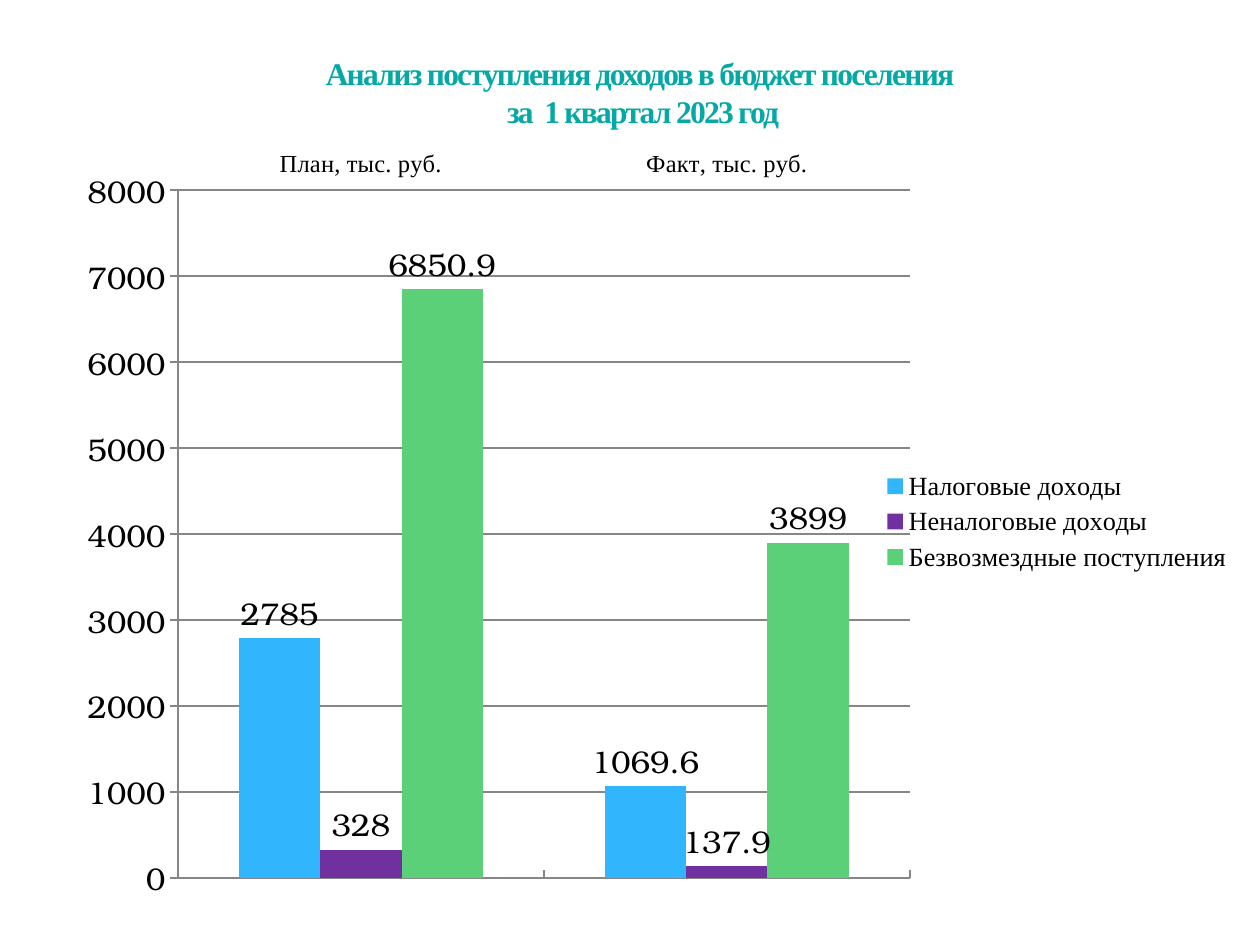
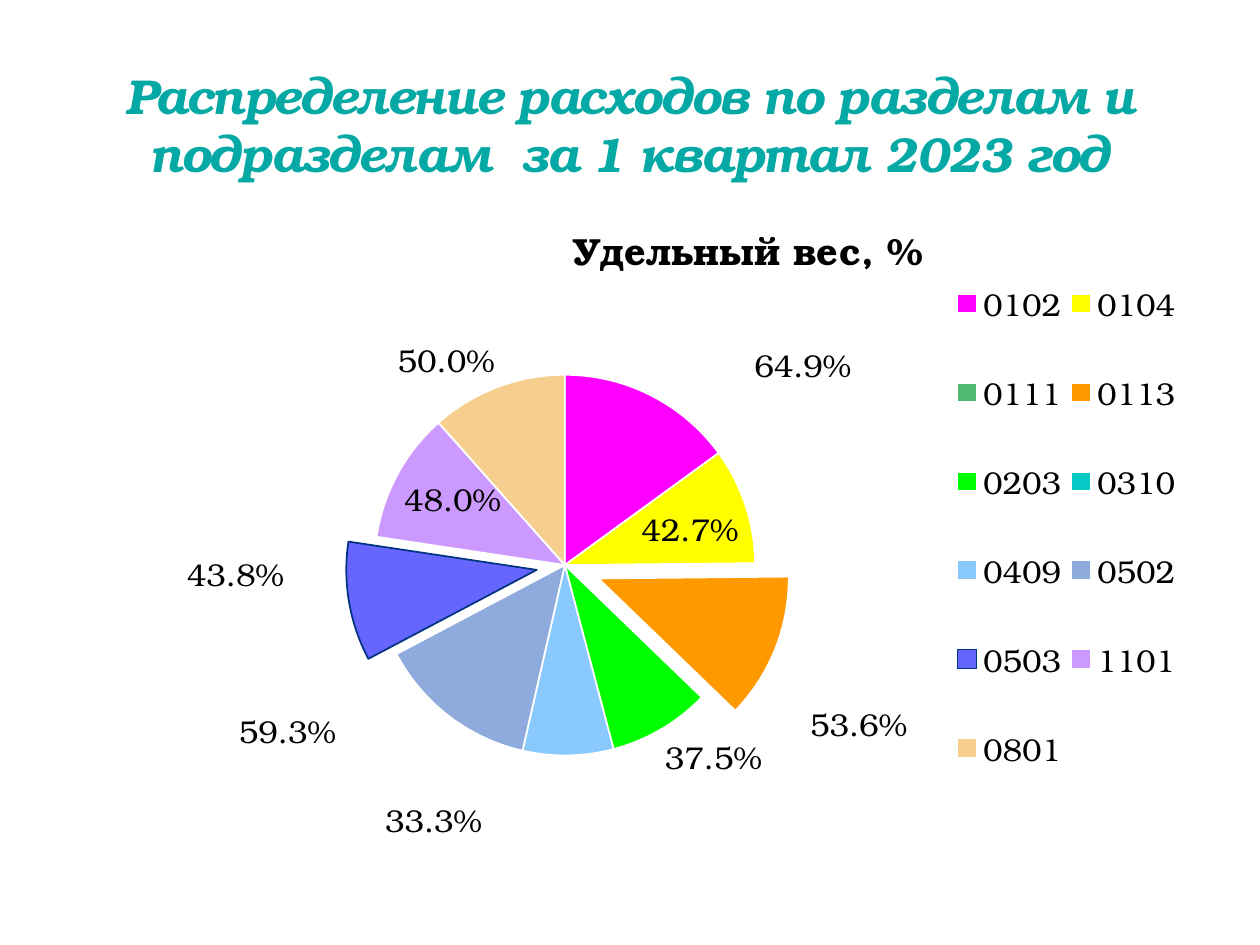
from lxml import etree
from pptx import Presentation
from pptx.chart.data import CategoryChartData
from pptx.dml.color import RGBColor
from pptx.enum.chart import (XL_CHART_TYPE, XL_LABEL_POSITION, XL_LEGEND_POSITION,
                             XL_TICK_LABEL_POSITION, XL_TICK_MARK)
from pptx.enum.text import MSO_ANCHOR, PP_ALIGN
from pptx.oxml.ns import qn
from pptx.util import Pt

OUTSIDE, INSIDE = XL_LABEL_POSITION.OUTSIDE_END, XL_LABEL_POSITION.INSIDE_END
MIDDLE, BOTTOM = MSO_ANCHOR.MIDDLE, MSO_ANCHOR.BOTTOM

# Content
INCOME_TITLE = "Анализ поступления доходов в бюджет поселения\v за  1 квартал 2023 год\v "
INCOME_PERIODS = ["План, тыс. руб.", "Факт, тыс. руб."]
INCOME = [
    ("Налоговые доходы", (2785, 1069.6), "sky"),
    ("Неналоговые доходы", (328, 137.9), "purple"),
    ("Безвозмездные поступления", (6850.9, 3899), "green"),
]
EXPENSE_TITLE = "Распределение расходов по разделам и подразделам  за 1 квартал 2023 год"
EXPENSE_CAPTION = "Удельный вес, %"
# Section, share, colour, label position, label shift in points, explosion
EXPENSES = [
    ("0102", 0.649, "magenta", OUTSIDE, (57, -2), 0),
    ("0104", 0.427, "yellow", INSIDE, None, 0),
    ("0111", 0, "leaf", None, None, 0),
    ("0113", 0.536, "orange", OUTSIDE, (16, 29), 19),
    ("0203", 0.375, "lime", OUTSIDE, None, 0),
    ("0310", 0, "aqua", None, None, 0),
    ("0409", 0.333, "pale_blue", OUTSIDE, (-77, 28), 0),
    ("0502", 0.593, "steel", OUTSIDE, (-62, -7), 0),
    ("0503", 0.438, "indigo", OUTSIDE, (-33, -29), 15),
    ("1101", 0.48, "lilac", INSIDE, None, 0),
    ("0801", 0.5, "sand", OUTSIDE, None, 0),
]

# Chart boxes on the slide; the boxes of their parts are relative to them
INCOME_BOX = (36.8, 83, 674.6, 430.6)
EXPENSE_BOX = (36, 120.2, 648, 360)

# Shared look
COLORS = {
    "title": "04A8A4", "text": "000000", "grid": "868686", "white": "FFFFFF",
    "sky": "31B6FD", "purple": "7030A0", "green": "5BD078", "magenta": "FF00FF",
    "yellow": "FFFF00", "leaf": "52BA70", "orange": "FF9900", "lime": "00FF00",
    "aqua": "05C9C5", "pale_blue": "8AC9FD", "steel": "8FAADC", "indigo": "6666FF",
    "lilac": "CC99FF", "sand": "F6CF8F", "navy": "003380",
}
BODY_FONT, PLAIN_FONT = "TeX Gyre Bonum", "Times New Roman"
SHARE_FORMAT = "0.0%;;"  # zero shares get no label


def rgb(name):
    return RGBColor.from_string(COLORS[name])


def set_font(font, size, name=BODY_FONT, color="text", bold=False, italic=False):
    font.size, font.name, font.bold, font.italic = Pt(size), name, bold, italic
    font.color.rgb = rgb(color)


def set_line(line, color, width):
    line.color.rgb = rgb(color)
    line.width = Pt(width)


def add_title(slide, text, box, anchor, size, font, italic=False):
    frame = slide.shapes.add_textbox(*map(Pt, box)).text_frame
    frame.word_wrap = True
    frame.vertical_anchor = anchor
    frame.text = text
    paragraph = frame.paragraphs[0]
    paragraph.alignment = PP_ALIGN.CENTER
    for run in paragraph.runs:
        set_font(run.font, size, font, "title", True, italic)
        run.font._element.set("spc", "-100")


def layout(chart_box, place_box, inner=False, shift=False):
    """Manual layout from points in the chart; a shift starts at the default place."""
    root = etree.Element(qn("c:layout"))
    manual = etree.SubElement(root, qn("c:manualLayout"))
    settings = [("layoutTarget", "inner")] if inner else []
    if not shift:
        settings += [("xMode", "edge"), ("yMode", "edge")]
    width, height = chart_box[2:]
    settings += [(tag, round(length / total, 4)) for tag, length, total
                 in zip("xywh", place_box, (width, height) * 2)]
    for tag, value in settings:
        etree.SubElement(manual, qn("c:" + tag)).set("val", str(value))
    return root


def place(element, new_layout, before):
    """Put a layout into a chart part, ahead of the first of the named children."""
    for old in element.findall(qn("c:layout")):
        element.remove(old)
    for tag in before:
        following = element.find(qn("c:" + tag))
        if following is not None:
            following.addprevious(new_layout)
            return
    element.append(new_layout)


def add_chart(slide, kind, box, categories, series, plot_box, legend_box, legend_font):
    data = CategoryChartData()
    data.categories = categories
    for name, values in series:
        data.add_series(name, values)
    chart = slide.shapes.add_chart(kind, *map(Pt, box), data).chart
    set_font(chart.font, 18)
    chart.has_legend = True
    chart.legend.position = XL_LEGEND_POSITION.RIGHT
    chart.legend.include_in_layout = False
    set_font(chart.legend.font, *legend_font)
    place(chart.legend._element, layout(box, legend_box), ["overlay", "spPr", "txPr"])
    plot_area = chart._chartSpace.chart.plotArea
    place(plot_area, layout(box, plot_box, inner=True), ["barChart", "pieChart"])
    return chart


def show_values(labels, number_format, position):
    labels.show_value = True
    labels.number_format = number_format
    labels.number_format_is_linked = False
    labels.position = position
    set_font(labels.font, 18)


def hide_leader_lines(labels):
    leader = labels._element.find(qn("c:showLeaderLines"))
    if leader is None:
        leader = etree.SubElement(labels._element, qn("c:showLeaderLines"))
    leader.set("val", "0")


def build_income(slide):
    chart = add_chart(
        slide, XL_CHART_TYPE.COLUMN_CLUSTERED, INCOME_BOX,
        INCOME_PERIODS, [row[:2] for row in INCOME],
        (64.8, 25.8, 418.3, 394), (462.6, 183.4, 209, 64.6), (15, PLAIN_FONT))
    chart.has_title = False
    plot = chart.plots[0]
    plot.gap_width, plot.overlap = 150, 0
    plot.vary_by_categories = False
    for series, (_, _, color) in zip(plot.series, INCOME):
        series.format.fill.solid()
        series.format.fill.fore_color.rgb = rgb(color)
        show_values(series.data_labels, "General", OUTSIDE)

    periods, amounts = chart.category_axis, chart.value_axis
    periods.tick_label_position = XL_TICK_LABEL_POSITION.HIGH
    periods.major_tick_mark = XL_TICK_MARK.INSIDE
    set_font(periods.tick_labels.font, 14, PLAIN_FONT)
    amounts.major_tick_mark = XL_TICK_MARK.OUTSIDE
    amounts.minimum_scale, amounts.maximum_scale, amounts.major_unit = 0, 8000, 1000
    set_font(amounts.tick_labels.font, 18)
    set_line(amounts.major_gridlines.format.line, "grid", 1)
    for axis in (periods, amounts):
        set_line(axis.format.line, "grid", 1)

    add_title(slide, INCOME_TITLE, (82, 32, 567.4, 62.6), MIDDLE, 18, PLAIN_FONT)


def build_expenses(slide):
    sections, shares = zip(*(row[:2] for row in EXPENSES))
    chart = add_chart(
        slide, XL_CHART_TYPE.PIE, EXPENSE_BOX, sections, [("Series 1", shares)],
        (178, 94, 217.6, 217.6), (505.4, 14.4, 136, 332), (18, BODY_FONT))
    chart.has_title = True
    chart.chart_title.text_frame.text = EXPENSE_CAPTION
    caption = chart.chart_title.text_frame.paragraphs[0].runs[0]
    set_font(caption.font, 21.6, bold=True)
    place(chart.chart_title._element, layout(EXPENSE_BOX, (287.6, 0)),
          ["overlay", "spPr", "txPr"])

    plot = chart.plots[0]
    plot.vary_by_categories = True
    pie = plot.series[0]
    show_values(pie.data_labels, SHARE_FORMAT, OUTSIDE)
    hide_leader_lines(pie.data_labels)
    for index, (section, _, color, position, shift, explosion) in enumerate(EXPENSES):
        point = pie.points[index]
        point.format.fill.solid()
        point.format.fill.fore_color.rgb = rgb(color)
        set_line(point.format.line, "navy" if section == "0503" else "white", 1)
        if explosion:
            data_point = next(p for p in pie._element.findall(qn("c:dPt"))
                              if p.find(qn("c:idx")).get("val") == str(index))
            offset = etree.Element(qn("c:explosion"), val=str(explosion))
            data_point.find(qn("c:spPr")).addprevious(offset)
        if position is None:
            continue
        label = point.data_label
        set_font(label.font, 18)
        label.position = position
        element = pie.data_labels._element.findall(qn("c:dLbl"))[-1]
        number = etree.Element(qn("c:numFmt"), formatCode=SHARE_FORMAT, sourceLinked="0")
        element.find(qn("c:idx")).addnext(number)
        if shift:
            place(element, layout(EXPENSE_BOX, shift, shift=True), ["numFmt"])

    add_title(slide, EXPENSE_TITLE, (36, 12.2, 648, 95.8), BOTTOM, 28, BODY_FONT, True)


def main():
    deck = Presentation()
    deck.slide_width, deck.slide_height = Pt(720), Pt(540)
    for build in (build_income, build_expenses):
        build(deck.slides.add_slide(deck.slide_layouts[6]))
    deck.save("out.pptx")


if __name__ == "__main__":
    main()
